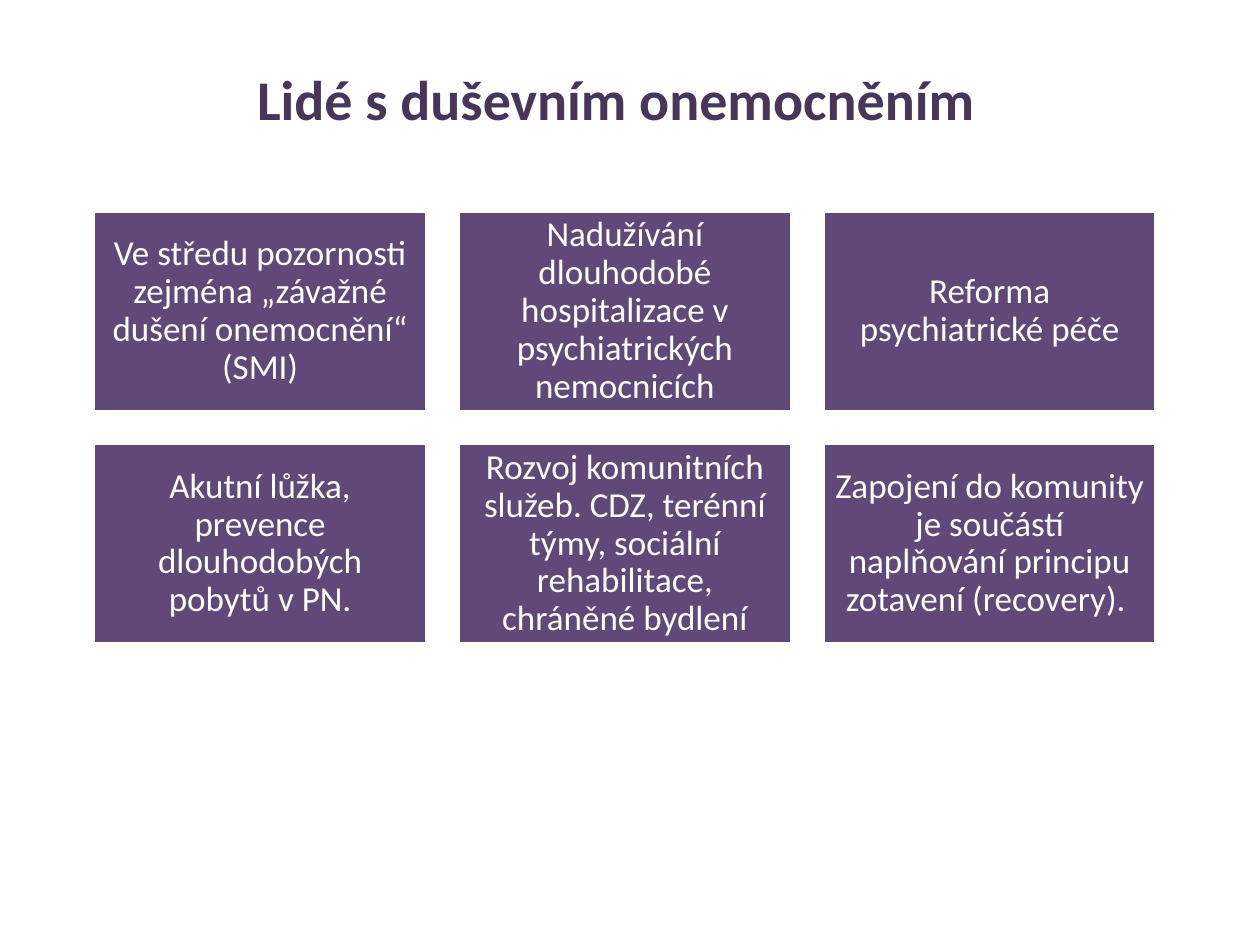
from dataclasses import dataclass

from pptx import Presentation
from pptx import util as u
from pptx.dml.color import RGBColor
from pptx.enum import shapes, text

PURPLE, DARK_PURPLE, WHITE = "604878", "48365A", "FFFFFF"
COLUMNS = 3
LEFT, TOP = 0.75, 1.68
TILE_WIDTH, TILE_HEIGHT = 2.63, 1.58
COLUMN_STEP, ROW_STEP = 2.895, 1.845


@dataclass
class Tile:
    wording: str
    row: int
    column: int


WORDINGS = [
    "Ve středu pozornosti zejména „závažné dušení onemocnění“ (SMI)",
    "Nadužívání dlouhodobé hospitalizace v psychiatrických nemocnicích",
    "Reforma psychiatrické péče",
    "Akutní lůžka, prevence dlouhodobých pobytů v PN.",
    "Rozvoj komunitních služeb. CDZ, terénní týmy, sociální rehabilitace, chráněné bydlení",
    "Zapojení do komunity je součástí naplňování principu zotavení (recovery). ",
]


def color(value: str) -> RGBColor:
    return RGBColor.from_string(value)


def write(box, wording: str, *, size: float, ink: str, bold: bool = False,
          anchor=text.MSO_ANCHOR.MIDDLE) -> None:
    """Fill a box with one centred, wrapped paragraph."""
    frame = box.text_frame
    frame.word_wrap = True
    frame.vertical_anchor = anchor
    para = frame.paragraphs[0]
    para.alignment = text.PP_ALIGN.CENTER
    para.line_spacing = 0.9
    span = para.add_run()
    span.text = wording
    span.font.name = "Calibri"
    span.font.size = u.Pt(size)
    span.font.bold = bold
    span.font.color.rgb = color(ink)


def draw_tile(page, tile: Tile) -> None:
    box = page.shapes.add_shape(
        shapes.MSO_SHAPE.RECTANGLE,
        u.Inches(LEFT + tile.column * COLUMN_STEP),
        u.Inches(TOP + tile.row * ROW_STEP),
        u.Inches(TILE_WIDTH), u.Inches(TILE_HEIGHT))
    box.shadow.inherit = False
    box.fill.solid()
    box.fill.fore_color.rgb = color(PURPLE)
    box.line.color.rgb = color(WHITE)
    box.line.width = u.Pt(1)
    frame = box.text_frame
    frame.margin_left = frame.margin_right = u.Inches(0.08)
    frame.margin_top = frame.margin_bottom = u.Inches(0.08)
    write(box, tile.wording, size=20, ink=WHITE)


def main() -> None:
    deck = Presentation()
    deck.slide_width, deck.slide_height = u.Inches(10), u.Inches(7.5)
    page = deck.slides.add_slide(deck.slide_layouts[6])

    title = page.shapes.add_textbox(
        u.Inches(0.28), u.Inches(0.52), u.Inches(9.22), u.Inches(1.02))
    write(title, "Lidé s duševním onemocněním", size=32, ink=DARK_PURPLE,
          bold=True, anchor=text.MSO_ANCHOR.TOP)

    for index, wording in enumerate(WORDINGS):
        draw_tile(page, Tile(wording, *divmod(index, COLUMNS)))

    deck.save("out.pptx")


if __name__ == "__main__":
    main()
